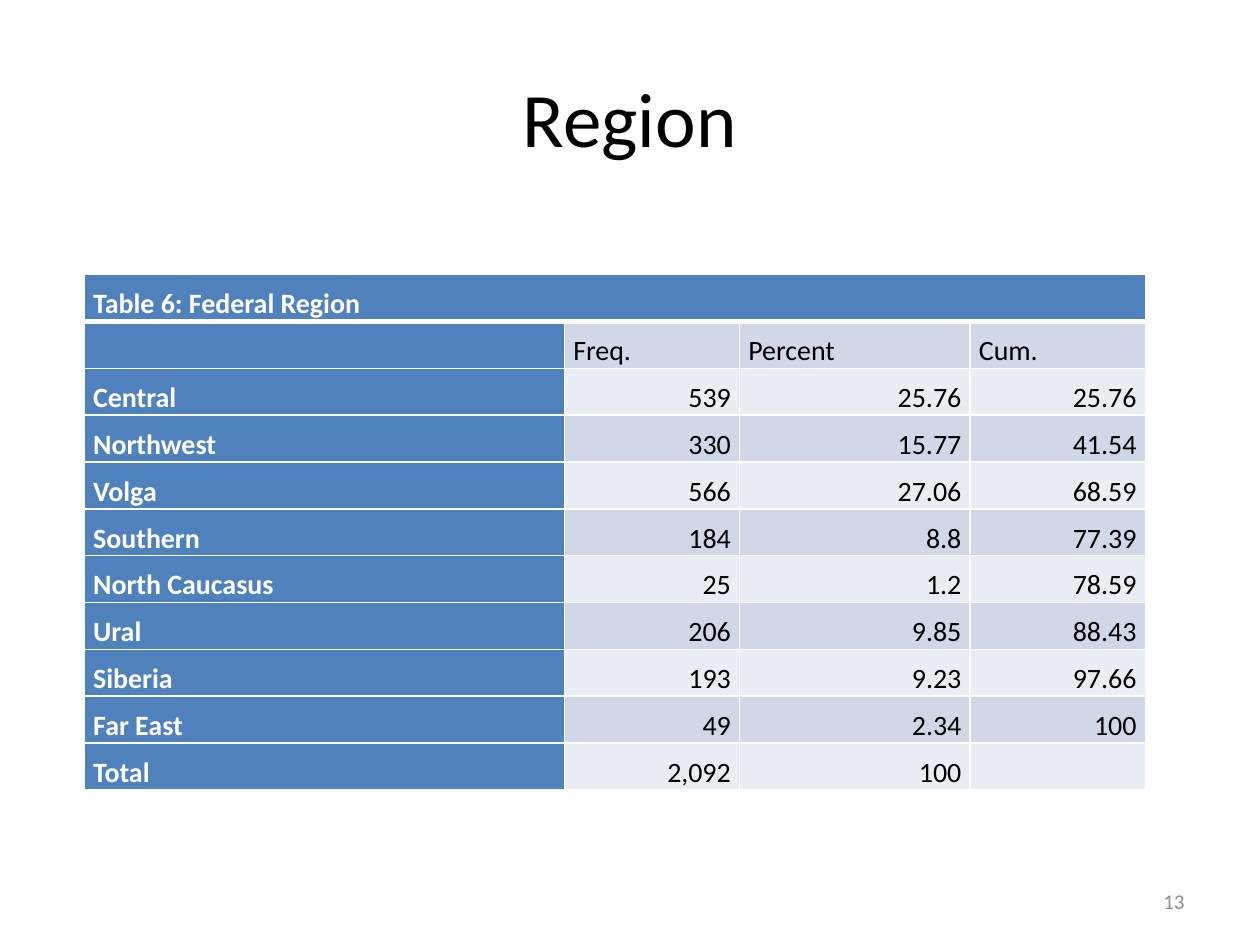
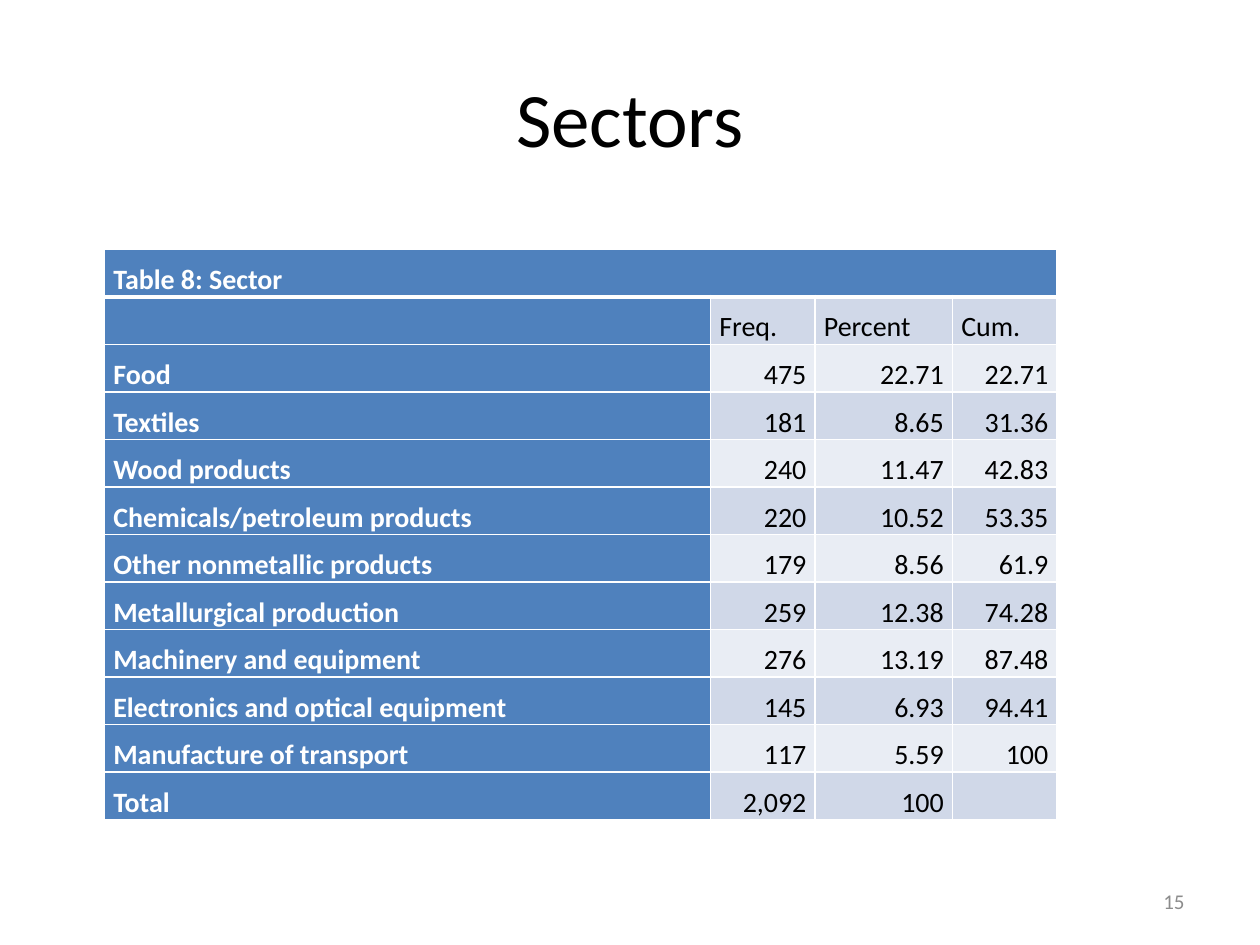
import pptx
import pptx.util
import pptx.dml.color
import pptx.enum.text
import lxml.etree
from pptx.util import Inches

HUES = {"head": "4F81BD", "dark": "D0D8E8", "light": "E9EDF4",
        "white": "FFFFFF", "black": "000000", "grey": "8C8C8C"}
FONT = "Calibri"
ALIGN = pptx.enum.text.PP_ALIGN
ANCHOR = pptx.enum.text.MSO_ANCHOR
LABELS = ["", "Freq.", "Percent", "Cum."]

REGIONS = [
    ["Central", "539", "25.76", "25.76"],
    ["Northwest", "330", "15.77", "41.54"],
    ["Volga", "566", "27.06", "68.59"],
    ["Southern", "184", "8.8", "77.39"],
    ["North Caucasus", "25", "1.2", "78.59"],
    ["Ural", "206", "9.85", "88.43"],
    ["Siberia", "193", "9.23", "97.66"],
    ["Far East", "49", "2.34", "100"],
    ["Total", "2,092", "100", ""],
]
SECTORS = [
    ["Food", "475", "22.71", "22.71"],
    ["Textiles", "181", "8.65", "31.36"],
    ["Wood products", "240", "11.47", "42.83"],
    ["Chemicals/petroleum products", "220", "10.52", "53.35"],
    ["Other nonmetallic products", "179", "8.56", "61.9"],
    ["Metallurgical production", "259", "12.38", "74.28"],
    ["Machinery and equipment", "276", "13.19", "87.48"],
    ["Electronics and optical equipment", "145", "6.93", "94.41"],
    ["Manufacture of transport", "117", "5.59", "100"],
    ["Total", "2,092", "100", ""],
]


def color(name):
    return pptx.dml.color.RGBColor.from_string(HUES[name])


def style(para, size, hue, align, bold=False):
    para.alignment = align
    font = para.font
    font.name, font.size, font.bold = FONT, pptx.util.Pt(size), bold
    font.color.rgb = color(hue)


def add_text(slide, text, box, size, hue, align):
    shape = slide.shapes.add_textbox(*map(Inches, box))
    frame = shape.text_frame
    frame.word_wrap = True
    frame.vertical_anchor = ANCHOR.MIDDLE
    frame.text = text
    style(frame.paragraphs[0], size, hue, align)


def add_rules(cell, top, bottom):
    """Draw white cell borders; they must precede the fill in the XML."""
    props = cell._tc.get_or_add_tcPr()
    for side, width in (("L", 1), ("R", 1), ("T", top), ("B", bottom)):
        line = lxml.etree.SubElement(props, pptx.oxml.ns.qn("a:ln" + side),
                                     w=str(pptx.util.Pt(width)))
        fill = lxml.etree.SubElement(line, pptx.oxml.ns.qn("a:solidFill"))
        lxml.etree.SubElement(fill, pptx.oxml.ns.qn("a:srgbClr"),
                              val=HUES["white"])


def fill_cell(cell, text, row, col):
    add_rules(cell, 3 if row == 1 else 1, 3 if row == 0 else 1)
    head = row == 0 or col == 0
    cell.fill.solid()
    cell.fill.fore_color.rgb = color(
        "head" if head else "dark" if row % 2 else "light")
    cell.margin_left = cell.margin_right = Inches(0.07)
    cell.margin_top = cell.margin_bottom = 0
    cell.vertical_anchor = ANCHOR.BOTTOM
    cell.text = text
    para = cell.text_frame.paragraphs[0]
    para.line_spacing = 1.07
    style(para, 16, "white" if head else "black",
          ALIGN.LEFT if head or row == 1 else ALIGN.RIGHT, head)


def add_grid(slide, caption, data, box, widths):
    rows = [[caption, "", "", ""], LABELS] + data
    frame = slide.shapes.add_table(len(rows), len(widths), *map(Inches, box))
    table = frame.table
    table.first_row = table.horz_banding = False
    for column, width in zip(table.columns, widths):
        column.width = Inches(width)
    for r, row in enumerate(rows):
        for c, text in enumerate(row):
            fill_cell(table.cell(r, c), text, r, c)
    table.cell(0, 0).merge(table.cell(0, len(widths) - 1))


def add_page(deck, title, number, caption, data, box, widths):
    slide = deck.slides.add_slide(deck.slide_layouts[6])
    add_text(slide, title, (0.5, 0.3, 9, 1.25), 44, "black", ALIGN.CENTER)
    add_grid(slide, caption, data, box, widths)
    add_text(slide, number, (7.17, 6.95, 2.33, 0.4), 12, "grey", ALIGN.RIGHT)


def main():
    deck = pptx.Presentation()
    deck.slide_width, deck.slide_height = Inches(10), Inches(7.5)
    add_page(deck, "Region", "13", "Table 6: Federal Region", REGIONS,
             (0.67, 2.18, 8.42, 4.09), (3.81, 1.39, 1.83, 1.39))
    add_page(deck, "Sectors", "15", "Table 8: Sector", SECTORS,
             (0.83, 1.98, 7.56, 4.53), (4.81, 0.83, 1.09, 0.83))
    deck.save("out.pptx")


if __name__ == "__main__":
    main()
